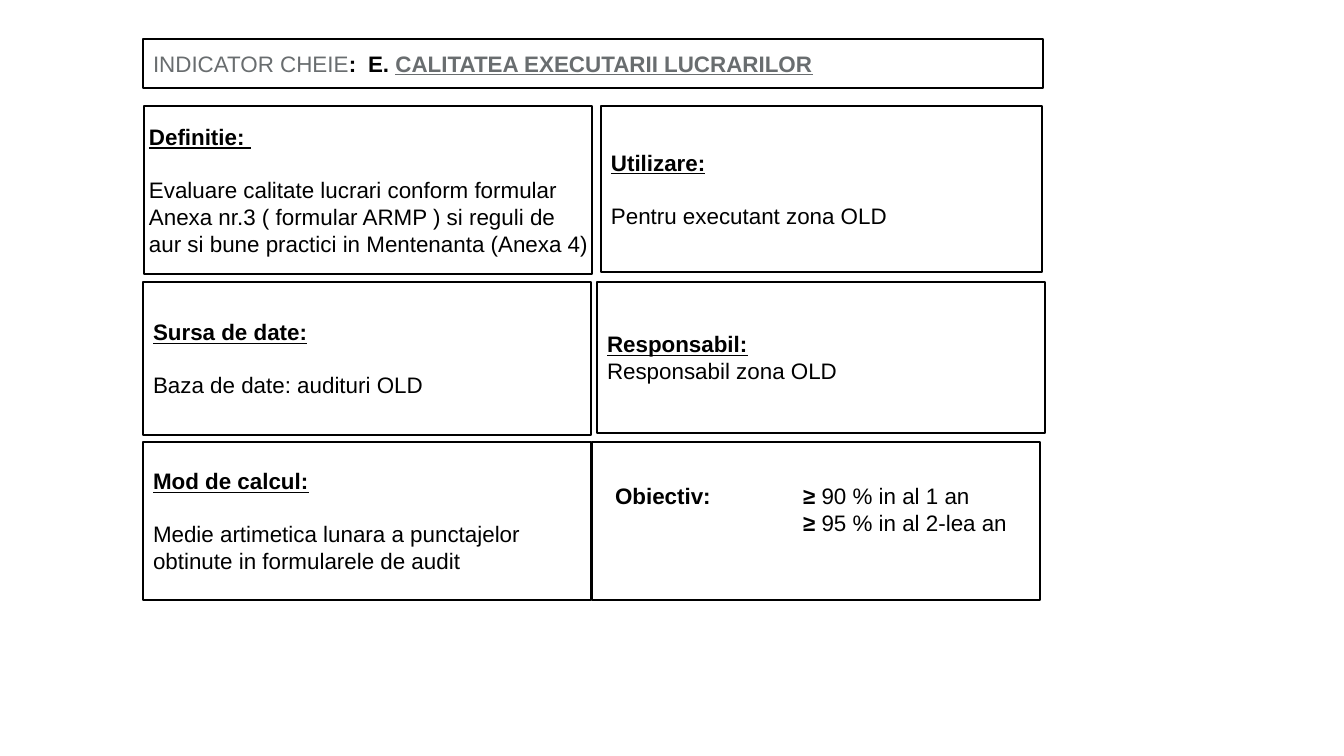
from pptx import Presentation
from pptx import util as u
from pptx.dml.color import RGBColor
from pptx.enum import shapes, text
from pptx.oxml.ns import qn
from lxml import etree

PX = 914400 / 134.4
COLORS = {"black": "000000", "gray": "696D6F", "white": "FFFFFF"}
HEADING = {"bold": True, "underline": True}
INSETS = {"margin_left": 10, "margin_top": 5, "margin_right": 10, "margin_bottom": 5}


def px(length):
    return u.Emu(round(length * PX))


def fill_box(shape, place, paragraphs, tab=None, **insets):
    """Place and outline a box, then write its paragraphs of (space before, runs)."""
    shape.left, shape.top, shape.width, shape.height = map(px, place)
    shape.shadow.inherit = False
    shape.fill.solid()
    shape.fill.fore_color.rgb = RGBColor.from_string(COLORS["white"])
    shape.line.color.rgb = RGBColor.from_string(COLORS["black"])
    shape.line.width = u.Pt(0.75)
    frame = shape.text_frame
    frame.word_wrap = True
    frame.auto_size = text.MSO_AUTO_SIZE.NONE
    frame.vertical_anchor = text.MSO_ANCHOR.MIDDLE
    for name, length in {**INSETS, **insets}.items():
        setattr(frame, name, px(length))
    for index, (space, runs) in enumerate(paragraphs):
        paragraph = frame.add_paragraph() if index else frame.paragraphs[0]
        paragraph.alignment = text.PP_ALIGN.LEFT
        paragraph.space_before = u.Pt(space)
        if tab:
            tabs = etree.SubElement(paragraph._p.get_or_add_pPr(), qn("a:tabLst"))
            etree.SubElement(tabs, qn("a:tab"), pos=str(px(tab)), algn="l")
        for words, color, style in runs:
            run = paragraph.add_run()
            run.text = words
            run.font.color.rgb = RGBColor.from_string(COLORS[color])
            for name, value in {"name": "Arial", "size": u.Pt(12), "bold": False, **style}.items():
                setattr(run.font, name, value)


presentation = Presentation()
presentation.slide_width, presentation.slide_height = px(1344), px(756)
slide = presentation.slides.add_slide(presentation.slide_layouts[5])

fill_box(slide.shapes.title, (143, 39, 900, 49), [(0, [
    ("INDICATOR CHEIE", "gray", {}),
    (":\tE. ", "black", {"bold": True}),
    ("CALITATEA EXECUTARII LUCRARILOR", "gray", HEADING),
])], tab=215)

# heading, body, place, space between them in points, own insets
cards = [
    ("Definitie: ", "Evaluare calitate lucrari conform formular Anexa nr.3 ( formular ARMP ) "
     "si reguli de aur si bune practici in Mentenanta (Anexa 4)",
     (144, 106, 448, 168), 14, {"margin_left": 5, "margin_right": 0}),
    ("Utilizare:", "Pentru executant zona OLD", (601, 106, 441, 166), 14, {}),
    ("Sursa de date:", "Baza de date: audituri OLD", (143, 282, 448, 153), 14, {}),
    ("Responsabil:", "Responsabil zona OLD", (597, 282, 448, 151), 0, {}),
    ("Mod de calcul:", "Medie artimetica lunara a punctajelor obtinute in formularele de audit",
     (143, 442, 448, 158), 14, {}),
]
for heading, body, place, gap, insets in cards:
    card = slide.shapes.add_shape(shapes.MSO_SHAPE.RECTANGLE, 0, 0, 0, 0)
    fill_box(card, place, [(0, [(heading, "black", HEADING)]), (gap, [(body, "black", {})])], **insets)

targets = [("Obiectiv:", "90 % in al 1 an"), ("", "95 % in al 2-lea an")]
objective = slide.shapes.add_shape(shapes.MSO_SHAPE.RECTANGLE, 0, 0, 0, 0)
fill_box(objective, (592, 442, 448, 158), [
    (0, [(f"{label}\t≥ ", "black", {"bold": True}), (target, "black", {})])
    for label, target in targets
], tab=188, margin_left=23, margin_bottom=29)

presentation.save("out.pptx")
